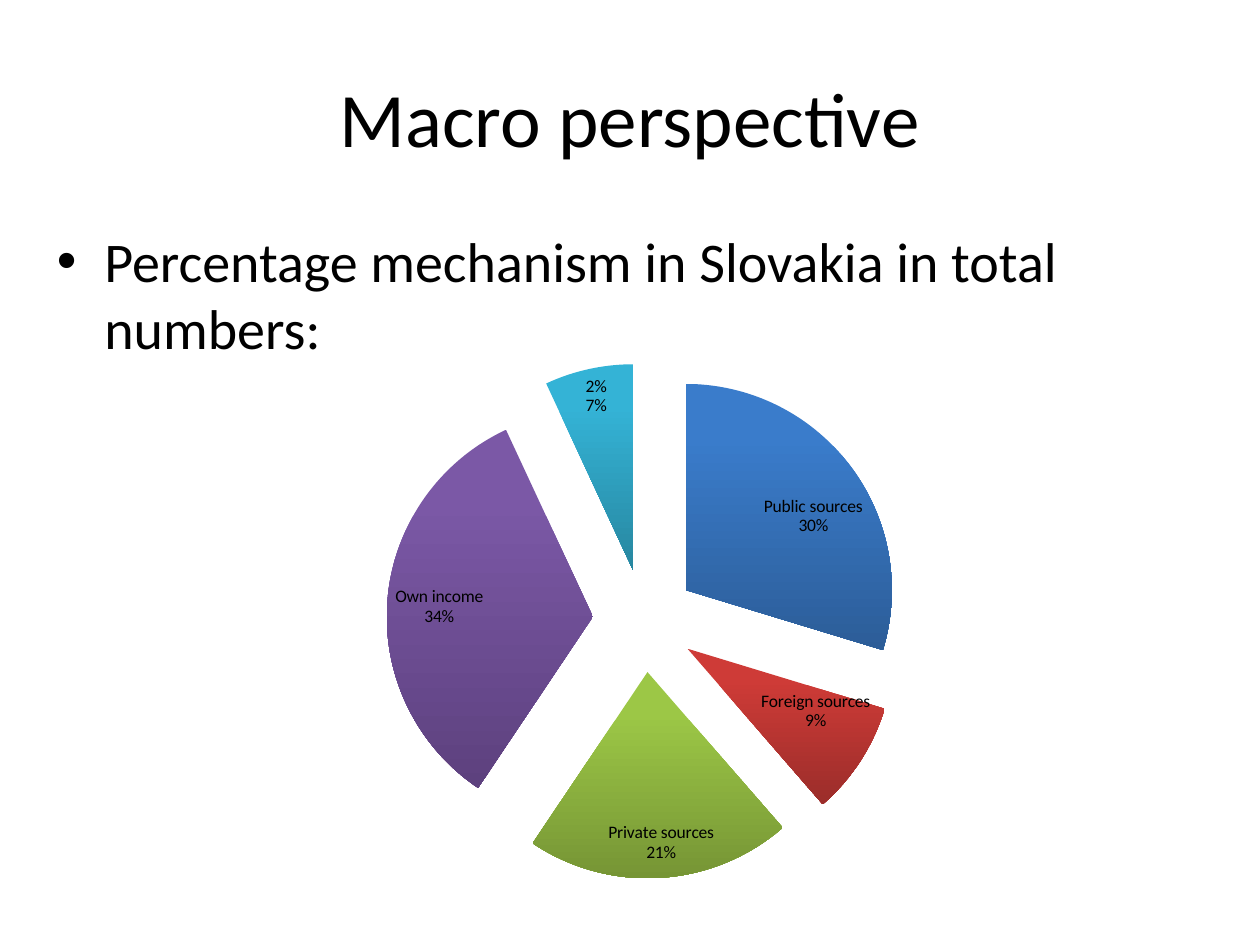
from lxml import etree
from pptx import Presentation
from pptx.chart.data import CategoryChartData
from pptx.dml.color import RGBColor
from pptx.enum.chart import XL_CHART_TYPE as ChartType, XL_LABEL_POSITION as LabelPos
from pptx.enum.text import MSO_ANCHOR as Anchor, PP_ALIGN as Align
from pptx.oxml import parse_xml
from pptx.oxml.ns import nsdecls, qn
from pptx.util import Pt

FONT = "Calibri"
TITLE = "Macro perspective"
STATEMENT = "Percentage mechanism in Slovakia in total numbers:"
# source of income, share in percent, top colour, bottom colour
SOURCES = [
    ("Public sources", 30, "3A7CCB", "2C5D98"),
    ("Foreign sources", 9, "CE3B37", "9B2D2A"),
    ("Private sources", 21, "9CC746", "769535"),
    ("Own income", 34, "7B58A6", "5D417E"),
    ("2%", 7, "34B3D6", "2787A0"),
]
TITLE_BOX = (36, 21.6, 648, 90)
STATEMENT_BOX = (25.5, 126, 658.5, 356.4)
CHART_BOX = (70.87, 207.5, 572.4, 294.5)
PLOT_AREA = {"x": 0.247, "y": 0, "w": 0.545, "h": 1}  # fractions of the chart
EXPLOSION = 25


def color(hex_string):
    return RGBColor.from_string(hex_string)


def style_font(font, size):
    font.name, font.size = FONT, Pt(size)
    font.color.rgb = color("000000")


def add_text(slide, text, box, size, align=Align.LEFT, anchor=Anchor.TOP,
             bullet=None, indent=0, before=0):
    frame = slide.shapes.add_textbox(*map(Pt, box)).text_frame
    frame.word_wrap = True
    frame.vertical_anchor = anchor
    paragraph = frame.paragraphs[0]
    paragraph.alignment = align
    paragraph.space_before = Pt(before)
    run = paragraph.add_run()
    run.text = text
    style_font(run.font, size)
    if bullet:
        props = paragraph._p.get_or_add_pPr()
        props.set("marL", str(Pt(indent)))
        props.set("indent", str(-Pt(indent)))
        etree.SubElement(props, qn("a:buFont")).set("typeface", "Arial")
        etree.SubElement(props, qn("a:buChar")).set("char", bullet)


def shade(fill, top, bottom):
    """Fill from top to bottom, holding the top colour for the first fifth."""
    fill.gradient()
    fill.gradient_angle = 270
    for stop, position, hex_string in zip(fill.gradient_stops, (0.2, 1), (top, bottom)):
        stop.position = position
        stop.color.rgb = color(hex_string)


def place_plot(chart):
    """Fix the inner plot area inside the chart frame."""
    modes = "".join(f'<c:{side}Mode val="edge"/>' for side in "xy")
    sizes = "".join(f'<c:{key} val="{value}"/>' for key, value in PLOT_AREA.items())
    plot_area = chart._chartSpace.chart.plotArea
    for old in plot_area.findall(qn("c:layout")):
        plot_area.remove(old)
    plot_area.insert(0, parse_xml(
        f'<c:layout {nsdecls("c")}><c:manualLayout><c:layoutTarget val="inner"/>'
        f'{modes}{sizes}</c:manualLayout></c:layout>'))


def add_pie(slide):
    data = CategoryChartData()
    data.categories = [name for name, *_ in SOURCES]
    data.add_series("Series 1", [share for _, share, *_ in SOURCES])
    chart = slide.shapes.add_chart(ChartType.PIE, *map(Pt, CHART_BOX), data).chart
    chart.has_title = chart.has_legend = False
    style_font(chart.font, 10)
    place_plot(chart)

    plot = chart.plots[0]
    plot.vary_by_categories = True
    plot.has_data_labels = True
    labels = plot.data_labels
    labels.show_category_name = labels.show_percentage = True
    labels.show_value = False
    labels.number_format, labels.number_format_is_linked = "0%", False
    labels.position = LabelPos.BEST_FIT
    style_font(labels.font, 10)
    separator = parse_xml(f'<c:separator {nsdecls("c")}>\n</c:separator>')
    labels._element.find(qn("c:showBubbleSize")).addnext(separator)

    pie = plot.series[0]
    for index, (_, _, top, bottom) in enumerate(SOURCES):
        slice_format = pie.points[index].format
        shade(slice_format.fill, top, bottom)
        slice_format.line.fill.background()
    explosion = parse_xml(f'<c:explosion {nsdecls("c")} val="{EXPLOSION}"/>')
    pie._element.find(qn("c:dPt")).addprevious(explosion)


def main():
    deck = Presentation()
    deck.slide_width, deck.slide_height = Pt(720), Pt(540)
    slide = deck.slides.add_slide(deck.slide_layouts[6])
    add_text(slide, TITLE, TITLE_BOX, 44, align=Align.CENTER, anchor=Anchor.MIDDLE)
    add_text(slide, STATEMENT, STATEMENT_BOX, 32, bullet="•", indent=27, before=6.4)
    add_pie(slide)
    deck.save("out.pptx")


if __name__ == "__main__":
    main()
